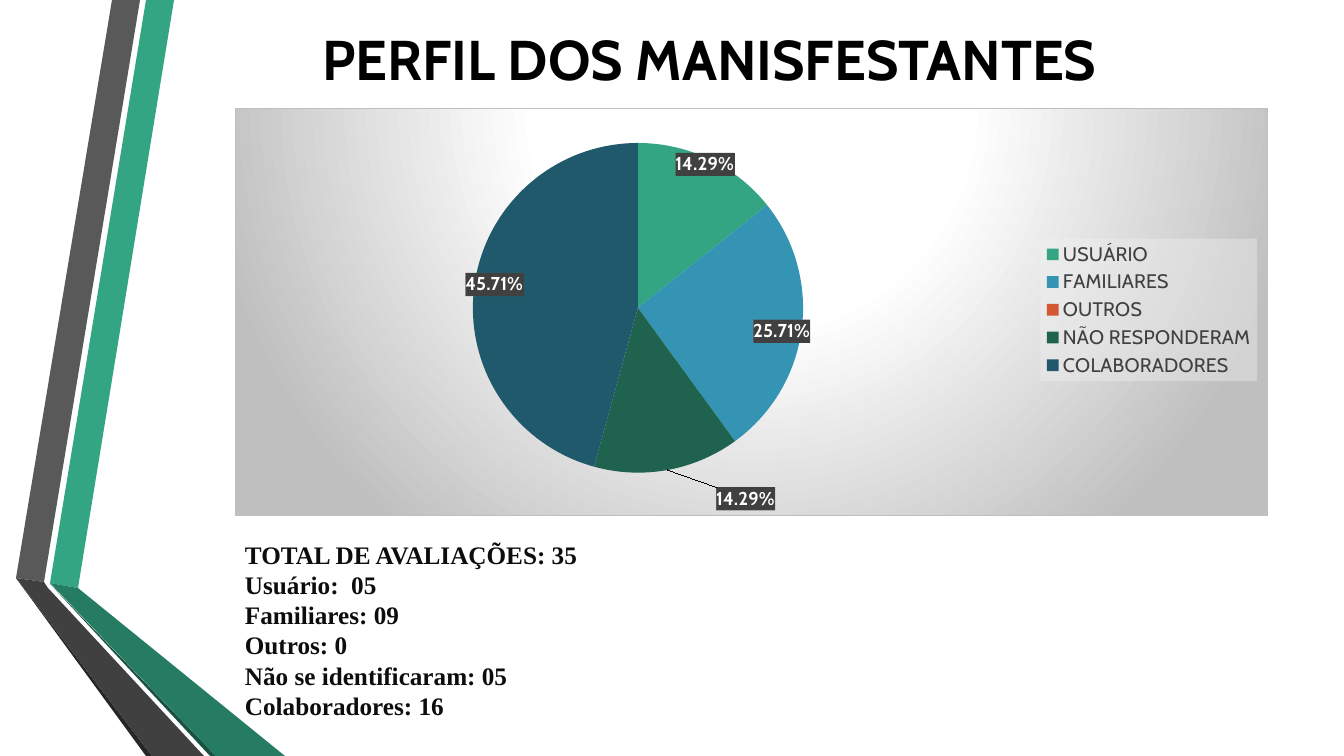
from copy import deepcopy

from pptx import Presentation
from pptx.chart.data import CategoryChartData
from pptx.dml.color import RGBColor
from pptx.dml.fill import FillFormat
from pptx.dml.line import LineFormat
from pptx.enum.chart import XL_CHART_TYPE, XL_LABEL_POSITION, XL_LEGEND_POSITION
from pptx.enum.dml import MSO_PATTERN
from pptx.enum.text import MSO_ANCHOR, MSO_AUTO_SIZE, PP_ALIGN
from pptx.oxml.xmlchemy import OxmlElement
from pptx.util import Pt

PIE = XL_CHART_TYPE.PIE
LABEL_CENTER = XL_LABEL_POSITION.CENTER
RIGHT = XL_LEGEND_POSITION.RIGHT
STRIPES = MSO_PATTERN.DARK_VERTICAL
MIDDLE = MSO_ANCHOR.MIDDLE
CENTER = PP_ALIGN.CENTER
NO_FIT = MSO_AUTO_SIZE.NONE

SLIDE_W, SLIDE_H = 1344, 756
SCALE = 12192000 / SLIDE_W
HEAD_FONT, BODY_FONT = "Cabin", "Times New Roman"

BLACK = RGBColor(0x00, 0x00, 0x00)
WHITE = RGBColor(0xFF, 0xFF, 0xFF)
INK = RGBColor(0x0D, 0x0D, 0x0D)
CHARCOAL = RGBColor(0x26, 0x26, 0x26)
DARK_GRAY = RGBColor(0x40, 0x40, 0x40)
GRAY = RGBColor(0x59, 0x59, 0x59)
SILVER = RGBColor(0xBF, 0xBF, 0xBF)
PALE = RGBColor(0xF2, 0xF2, 0xF2)
GREEN = RGBColor(0x33, 0xA5, 0x83)
MID_GREEN = RGBColor(0x26, 0x7C, 0x62)
DEEP_GREEN = RGBColor(0x1A, 0x52, 0x42)
FOREST = RGBColor(0x1F, 0x63, 0x4F)
BLUE = RGBColor(0x35, 0x94, 0xB4)
ORANGE = RGBColor(0xD3, 0x57, 0x31)
NAVY = RGBColor(0x20, 0x59, 0x6C)

RIBBONS = [
    (GREEN, [(50, 583), (78, 588), (174, 0), (146, 0)]),
    (GRAY, [(140, 0), (112, 0), (16, 578), (44, 582)]),
    (CHARCOAL, [(16, 578), (146, 756), (152, 756)]),
    (DEEP_GREEN, [(50, 584), (210, 756), (216, 756)]),
    (MID_GREEN, [(50, 583), (216, 756), (285, 756), (78, 588)]),
    (DARK_GRAY, [(204, 756), (48, 588), (44, 582), (16, 578), (152, 756)]),
]
PROFILES = [
    ("USUÁRIO", 14.29, GREEN, (30, -70)),
    ("FAMILIARES", 25.71, BLUE, (57, 11)),
    ("OUTROS", 0, ORANGE, None),
    ("NÃO RESPONDERAM", 14.29, FOREST, (93, 109)),
    ("COLABORADORES", 45.71, NAVY, (-64, -12)),
]
TOTALS = [
    "TOTAL DE AVALIAÇÕES: 35",
    "Usuário:  05",
    "Familiares: 09",
    "Outros: 0",
    "Não se identificaram: 05",
    "Colaboradores: 16",
]


def px(n):
    return round(n * SCALE)


def place(box):
    return [px(n) for n in box]


def set_font(font, name, size, color, bold=False):
    font.name = name
    font.size = Pt(size)
    font.color.rgb = color
    font.bold = bold


def add_child(parent, tag, **attrs):
    child = OxmlElement(tag)
    for name, value in attrs.items():
        child.set(name, str(value))
    parent.append(child)
    return child


def set_layout(parent, index, **values):
    for old in parent.findall("{*}layout"):
        parent.remove(old)
    layout = OxmlElement("c:layout")
    manual = add_child(layout, "c:manualLayout")
    for name, value in values.items():
        add_child(manual, f"c:{name}", val=value)
    parent.insert(index, layout)


def properties_after(element):
    props = OxmlElement("c:spPr")
    element.addnext(props)
    return props


def add_ribbons(s, box):
    left, top = box
    for color, points in RIBBONS:
        corners = [(left + x, top + y) for x, y in points]
        builder = s.shapes.build_freeform(*corners[0], scale=SCALE)
        builder.add_line_segments(corners[1:], close=True)
        sp = builder.convert_to_shape()
        sp.shadow.inherit = False
        sp.fill.solid()
        sp.fill.fore_color.rgb = color
        sp.line.fill.background()


def add_title(s, box):
    sp = s.shapes.title
    sp.left, sp.top, sp.width, sp.height = place(box)
    tf = sp.text_frame
    tf.text = "PERFIL DOS MANISFESTANTES "
    tf.auto_size = NO_FIT
    tf.vertical_anchor = MIDDLE
    p = tf.paragraphs[0]
    p.alignment = CENTER
    set_font(p.font, HEAD_FONT, 40, BLACK, True)


def shade_chart(root):
    props = properties_after(root.find("{*}chart"))
    fill = FillFormat.from_fill_parent(props)
    fill.gradient()
    for stop, color, position in zip(fill.gradient_stops, (WHITE, SILVER), (0.39, 1)):
        stop.color.rgb = color
        stop.position = position
    grad = props.find("{*}gradFill")
    grad.remove(grad.find("{*}lin"))
    circle = add_child(grad, "a:path", path="circle")
    add_child(circle, "a:fillToRect", l=50000, t=-80000, r=50000, b=180000)
    line = LineFormat(props)
    line.color.rgb = SILVER
    line.width = Pt(0.75)


def shade_legend(legend):
    props = properties_after(legend.find("{*}overlay"))
    fill = FillFormat.from_fill_parent(props)
    fill.solid()
    fill.fore_color.rgb = PALE
    add_child(props.find(".//{*}srgbClr"), "a:alpha", val=39000)


def label_slices(series, root, w, h):
    labels = series.data_labels
    labels.number_format = "0.00%"
    labels.number_format_is_linked = False
    labels.position = LABEL_CENTER
    labels.show_value = False
    labels.show_percentage = True
    set_font(labels.font, HEAD_FONT, 13.3, WHITE, True)
    for i in range(len(PROFILES)):
        label = series.points[i].data_label
        label.position = LABEL_CENTER
        set_font(label.font, HEAD_FONT, 13.3, WHITE, True)

    group = root.find(".//{*}ser/{*}dLbls")
    for item, (_, _, _, shift) in zip(group.findall("{*}dLbl"), PROFILES):
        item.find("{*}showVal").set("val", "0")
        item.find("{*}showPercent").set("val", "1" if shift else "0")
        for old in item.findall("{*}spPr"):
            item.remove(old)
        if not shift:
            continue
        number = deepcopy(group.find("{*}numFmt"))
        item.find("{*}txPr").addprevious(number)
        fill = FillFormat.from_fill_parent(properties_after(number))
        fill.patterned()
        fill.pattern = STRIPES
        fill.fore_color.rgb = DARK_GRAY
        fill.back_color.rgb = GRAY
        dx, dy = shift
        set_layout(item, 1, x=round(dx / w, 2), y=round(dy / h, 2))


def add_profile_chart(s, box):
    data = CategoryChartData()
    data.categories = [name for name, *_ in PROFILES]
    data.add_series("Series 1", [value for _, value, *_ in PROFILES])
    chart = s.shapes.add_chart(PIE, *place(box), data).chart
    chart.has_title = False
    set_font(chart.font, HEAD_FONT, 10, BLACK)
    chart.has_legend = True
    chart.legend.position = RIGHT
    chart.legend.include_in_layout = False
    set_font(chart.legend.font, HEAD_FONT, 14, DARK_GRAY)

    plot = chart.plots[0]
    plot.vary_by_categories = True
    series = plot.series[0]
    for i, (_, _, color, _) in enumerate(PROFILES):
        fill = series.points[i].format.fill
        fill.solid()
        fill.fore_color.rgb = color

    root = chart.element
    edge = {"xMode": "edge", "yMode": "edge"}
    legend = root.find(".//{*}legend")
    set_layout(root.find(".//{*}plotArea"), 0, layoutTarget="inner", **edge,
               x=0.23, y=0.08, w=0.32, h=0.82)
    set_layout(legend, 1, **edge, x=0.78, y=0.32, w=0.21, h=0.35)
    shade_chart(root)
    shade_legend(legend)
    label_slices(series, root, *box[2:])


def add_totals(s, box):
    tf = s.shapes.add_textbox(*place(box)).text_frame
    tf.word_wrap = True
    tf.text = "\n".join(TOTALS)
    for p in tf.paragraphs:
        set_font(p.font, BODY_FONT, 18, INK, True)


def main():
    prs = Presentation()
    prs.slide_width, prs.slide_height = px(SLIDE_W), px(SLIDE_H)
    s = prs.slides.add_slide(prs.slide_layouts[5])
    add_ribbons(s, (0, 0))
    add_title(s, (163, 9, 1105, 99))
    add_profile_chart(s, (235, 108, 1033, 408))
    add_totals(s, (235, 534, 401, 222))
    prs.save("out.pptx")


if __name__ == "__main__":
    main()
